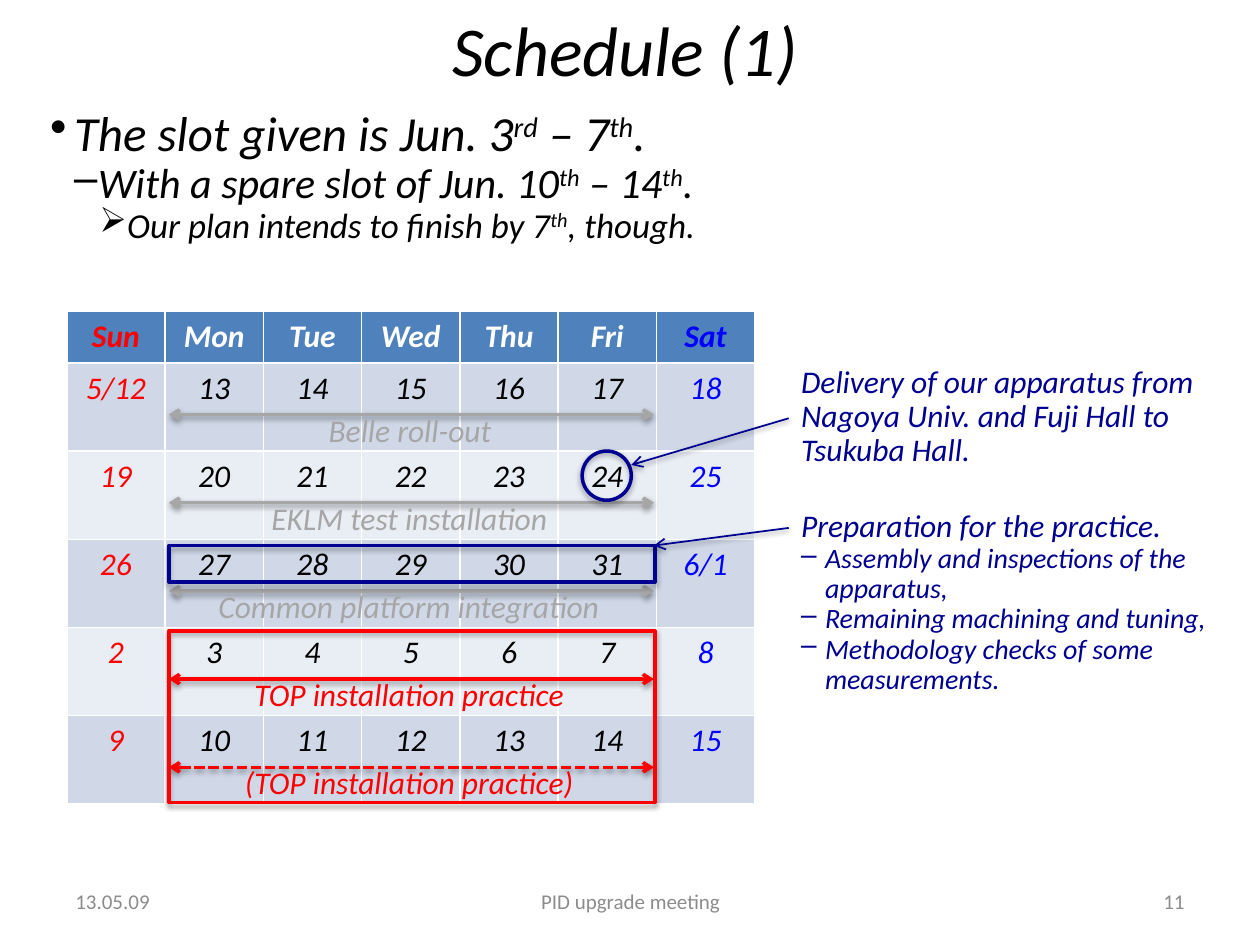
from lxml.etree import SubElement as Sub
from pptx import Presentation
from pptx.dml.color import RGBColor as RGB
from pptx.enum.dml import MSO_LINE as Dash
from pptx.enum.shapes import MSO_CONNECTOR as Link, MSO_SHAPE as Shape
from pptx.enum.text import MSO_ANCHOR as Anchor, PP_ALIGN as Align
from pptx.oxml.ns import qn
from pptx.util import Inches, Pt

BLACK, WHITE = RGB(0, 0, 0), RGB(255, 255, 255)
RED, BLUE, NAVY = RGB(255, 0, 0), RGB(0, 0, 255), RGB(0, 0, 0x90)
GRAY, DIM = RGB(0xA6, 0xA6, 0xA6), RGB(0x8C, 0x8C, 0x8C)
HEAD, DARK, LIGHT = RGB(0x4F, 0x81, 0xBD), RGB(0xD0, 0xD8, 0xE8), RGB(0xE9, 0xED, 0xF4)

COL, TOP, ROW = 0.78, 0.41, 0.7
DAYS = [
    "Sun Mon Tue Wed Thu Fri Sat",
    "5/12 13 14 15 16 17 18",
    "19 20 21 22 23 24 25",
    "26 27 28 29 30 31 6/1",
    "2 3 4 5 6 7 8",
    "9 10 11 12 13 14 15",
]
TASKS = [
    ("Belle roll-out", 1.58, GRAY, False),
    ("EKLM test installation", 2.49, GRAY, False),
    ("Common platform integration", 3.33, GRAY, False),
    ("TOP installation practice", 2.76, RED, False),
    ("(TOP installation practice)", 2.91, RED, True),
]
PLAN = [
    (["The slot given is Jun. 3", "rd", " – 7", "th", "."], 28, "•", 0.19),
    (["With a spare slot of Jun. 10", "th", " – 14", "th", "."], 24, "–", 0.38),
    (["Our plan intends to finish by 7", "th", ", though."], 20, "➢", 0.58),
]
STEPS = [
    "Assembly and inspections of the apparatus,",
    "Remaining machining and tuning,",
    "Methodology checks of some measurements.",
]


def style(para, size, color, slant=True, align=Align.LEFT, bold=False):
    """Set the font and alignment of a paragraph."""
    para.alignment = align
    font = para.font
    font.name, font.size, font.italic, font.bold = "Calibri", Pt(size), slant, bold
    font.color.rgb = color


def bullet(para, mark, left):
    """Give a paragraph a hanging bullet."""
    props = para._p.get_or_add_pPr()
    props.set("marL", str(Inches(left)))
    props.set("indent", str(Inches(-0.19)))
    char = props.makeelement(qn("a:buChar"), {"char": mark})
    props.insert_element_before(char, "a:tabLst", "a:defRPr", "a:extLst")


def frame(slide, x, y, w, h, anchor=Anchor.TOP):
    """Add a wrapping text box and return its text frame."""
    text = slide.shapes.add_textbox(Inches(x), Inches(y), Inches(w), Inches(h)).text_frame
    text.word_wrap = True
    text.vertical_anchor = anchor
    return text


def label(slide, box, words, size, color, slant=True, align=Align.LEFT, anchor=Anchor.TOP):
    """Add a text box with one paragraph and return its text frame."""
    text = frame(slide, *box, anchor)
    para = text.paragraphs[0]
    para.add_run().text = words
    style(para, size, color, slant, align)
    return text


def shade(shape, alpha):
    """Drop a soft shadow below a shape."""
    effects = Sub(shape._element.spPr, qn("a:effectLst"))
    drop = Sub(effects, qn("a:outerShdw"), blurRad=str(Pt(3.1)), dist=str(Pt(1.6)),
               dir="5400000", rotWithShape="0")
    tint = Sub(drop, qn("a:srgbClr"), val="000000")
    Sub(tint, qn("a:alpha"), val=str(alpha * 1000))


def arrow(slide, start, end, color, width, both=False, dashed=False):
    """Draw a line with an open arrowhead at its start or at both ends."""
    line = slide.shapes.add_connector(Link.STRAIGHT, *map(Inches, start + end))
    line.line.color.rgb = color
    line.line.width = Pt(width)
    if dashed:
        line.line.dash_style = Dash.SQUARE_DOT
    for tag in ("a:headEnd", "a:tailEnd")[:1 + both]:
        Sub(line.line._get_or_add_ln(), qn(tag), type="arrow")
    shade(line, 38)


def ring(slide, kind, x, y, w, h, color):
    """Draw an unfilled outline around dates."""
    shape = slide.shapes.add_shape(kind, Inches(x), Inches(y), Inches(w), Inches(h))
    shape.fill.background()
    shape.line.color.rgb = color
    shape.line.width = Pt(2)
    shade(shape, 35)


def agenda(slide, x, y, w, h):
    """Write the three levels of slot notes."""
    text = frame(slide, x, y, w, h)
    for i, (parts, size, mark, left) in enumerate(PLAN):
        para = text.add_paragraph() if i else text.paragraphs[0]
        para.level, para.line_spacing = i, 0.9
        style(para, size, BLACK)
        bullet(para, mark, left)
        for j, part in enumerate(parts):
            run = para.add_run()
            run.text = part
            if j % 2:
                run._r.get_or_add_rPr().set("baseline", "30000")


def month(slide, x, y):
    """Build the calendar table."""
    table = slide.shapes.add_table(len(DAYS), 7, Inches(x), Inches(y), Inches(7 * COL),
                                   Inches(TOP + 5 * ROW)).table
    for col in table.columns:
        col.width = Inches(COL)
    for r, week in enumerate(DAYS):
        table.rows[r].height = Inches(ROW if r else TOP)
        for c, day in enumerate(week.split()):
            cell = table.cell(r, c)
            cell.fill.solid()
            cell.fill.fore_color.rgb = (DARK if r % 2 else LIGHT) if r else HEAD
            cell.vertical_anchor = Anchor.TOP if r else Anchor.MIDDLE
            para = cell.text_frame.paragraphs[0]
            para.add_run().text = day
            color = {0: RED, 6: BLUE}.get(c, BLACK if r else WHITE)
            style(para, 18, color, align=Align.CENTER, bold=r == 0)


def tasks(slide, x, y):
    """Lay the task arrows, their names and the outlines over the calendar."""
    left, right = x + 0.81, x + 4.66
    for i, (name, wide, color, dashed) in enumerate(TASKS):
        line = y + 0.82 + i * ROW
        arrow(slide, (left, line), (right, line), color, 2, True, dashed)
        label(slide, (x + 2.77 - wide / 2, line - 0.08, wide, 0.4), name, 18, color)
    ring(slide, Shape.OVAL, x + 4.09, y + 1.11, 0.39, 0.39, NAVY)
    ring(slide, Shape.RECTANGLE, left, y + 1.86, 3.86, 0.29, NAVY)
    ring(slide, Shape.RECTANGLE, left, y + 2.54, 3.86, 1.36, RED)


def notes(slide, x, y, w):
    """Write the two remarks and point them at their dates."""
    words = "Delivery of our apparatus from Nagoya Univ. and Fuji Hall to Tsukuba Hall."
    text = label(slide, (x, y, w, 0.92), words, 18, NAVY)
    text.paragraphs[0].line_spacing = 0.9
    text = label(slide, (x, y + 1.14, w, 1.59), "Preparation for the practice.", 18, NAVY)
    text.paragraphs[0].line_spacing = 0.9
    for step in STEPS:
        para = text.add_paragraph()
        para.add_run().text = step
        para.level, para.line_spacing = 1, 0.9
        style(para, 16, NAVY)
        bullet(para, "–", 0.19)
    arrow(slide, (x - 1.25, y + 0.83), (x, y + 0.46), NAVY, 1)
    arrow(slide, (x - 1.07, y + 1.47), (x, y + 1.33), NAVY, 1)


def footer(slide, y, h):
    """Write the date, meeting name and page number."""
    for x, w, words, align in ((0.5, 2.33, "13.05.09", Align.LEFT),
                               (3.42, 3.17, "PID upgrade meeting", Align.CENTER),
                               (7.17, 2.33, "11", Align.RIGHT)):
        label(slide, (x, y, w, h), words, 12, DIM, False, align, Anchor.MIDDLE)


def main():
    """Build the schedule slide."""
    deck = Presentation()
    deck.slide_width, deck.slide_height = Inches(10), Inches(7.5)
    slide = deck.slides.add_slide(deck.slide_layouts[6])
    label(slide, (0.39, 0, 9.14, 0.77), "Schedule (1)", 40, BLACK,
          align=Align.CENTER, anchor=Anchor.MIDDLE)
    footer(slide, 6.95, 0.4)
    agenda(slide, 0.3, 0.82, 5.39, 1.2)
    month(slide, 0.53, 2.47)
    tasks(slide, 0.53, 2.47)
    notes(slide, 6.26, 2.86, 3.55)
    deck.save("out.pptx")


if __name__ == "__main__":
    main()
